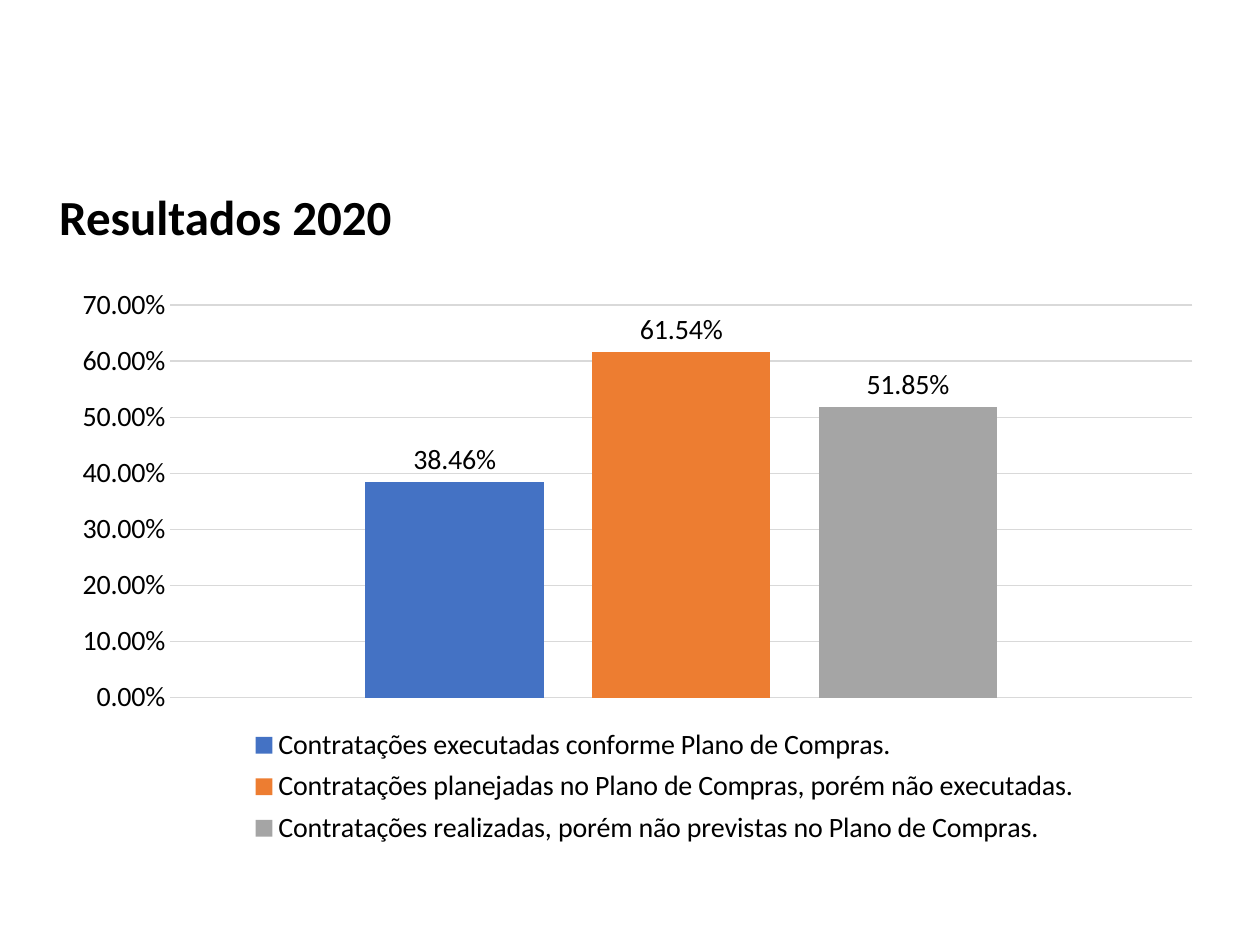
"""Build the 2020 results slide: a title above a clustered column chart."""
from lxml import etree
from pptx import Presentation
from pptx import util as u
from pptx.chart.data import CategoryChartData
from pptx.dml.color import RGBColor
from pptx.enum import chart as ch, text
from pptx.oxml.ns import qn

TITLE = "Resultados 2020"
CATEGORIES = ["1"]
SERIES = [
    ("Contratações executadas conforme Plano de Compras.", 0.3846, "blue"),
    ("Contratações planejadas no Plano de Compras, porém não executadas.", 0.6154, "orange"),
    ("Contratações realizadas, porém não previstas no Plano de Compras.", 0.5185, "gray"),
]
COLORS = {"text": "000000", "grid": "D9D9D9", "blue": "4472C4",
          "orange": "ED7D31", "gray": "A5A5A5"}
PERCENT = "0.00%"
TITLE_BOX = (26.64, 106.56, 666, 398.88)
CHART_BOX = (28.08, 140.4, 664.56, 353.52)
PLOT_BOX = (69.1, 33.9, 584.2, 224.5)
LEGEND_BOX = (112.5, 271.5, 478.5, 75.5)
TITLE_FONT = {"name": "Calibri", "size": u.Pt(28), "bold": True}
CHART_FONT = {"name": "Calibri", "size": u.Pt(16), "bold": False}


def rgb(key):
    """Return the named colour."""
    return RGBColor.from_string(COLORS[key])


def apply(obj, values):
    """Set attributes from a dict."""
    for name, value in values.items():
        setattr(obj, name, value)


def style_font(font, values):
    """Format a font in the text colour."""
    apply(font, values)
    font.color.rgb = rgb("text")


def points(box):
    """Convert a box to point lengths."""
    return [u.Pt(n) for n in box]


def add_title(s):
    """Place and format the title."""
    sp = s.shapes.title
    apply(sp, dict(zip(("left", "top", "width", "height"), points(TITLE_BOX))))
    tf = sp.text_frame
    apply(tf, {"text": TITLE, "word_wrap": True, "auto_size": text.MSO_AUTO_SIZE.NONE,
               "vertical_anchor": text.MSO_ANCHOR.TOP})
    p = tf.paragraphs[0]
    apply(p, {"alignment": text.PP_ALIGN.LEFT, "line_spacing": 0.9, "space_before": u.Pt(0)})
    style_font(p.runs[0].font, TITLE_FONT)


def set_layout(parent, index, box, target=None):
    """Fix a chart part at a box measured in points inside the chart."""
    for old in parent.findall(qn("c:layout")):
        parent.remove(old)
    layout = etree.Element(qn("c:layout"))
    manual = etree.SubElement(layout, qn("c:manualLayout"))
    values = {"layoutTarget": target} if target else {}
    values.update(xMode="edge", yMode="edge")
    values.update(zip("xywh", (n / size for n, size in zip(box, CHART_BOX[2:] * 2))))
    for name, value in values.items():
        etree.SubElement(manual, qn(f"c:{name}")).set("val", str(value))
    parent.insert(index, layout)


def add_chart(s):
    """Add the column chart."""
    data = CategoryChartData(number_format=PERCENT)
    data.categories = CATEGORIES
    for name, value, _ in SERIES:
        data.add_series(name, [value])
    chart = s.shapes.add_chart(ch.XL_CHART_TYPE.COLUMN_CLUSTERED, *points(CHART_BOX), data).chart
    apply(chart, {"has_title": False, "has_legend": True})
    style_font(chart.font, CHART_FONT)
    apply(chart.legend, {"position": ch.XL_LEGEND_POSITION.BOTTOM, "include_in_layout": False})
    style_font(chart.legend.font, CHART_FONT)

    chart.category_axis.visible = False
    axis = chart.value_axis
    apply(axis, {"minimum_scale": 0, "maximum_scale": 0.7, "major_unit": 0.1,
                 "major_tick_mark": ch.XL_TICK_MARK.NONE,
                 "minor_tick_mark": ch.XL_TICK_MARK.NONE, "has_major_gridlines": True})
    axis.format.line.fill.background()
    grid = axis.major_gridlines.format.line
    grid.width = u.Pt(0.75)
    grid.color.rgb = rgb("grid")
    number = {"number_format": PERCENT, "number_format_is_linked": False}
    apply(axis.tick_labels, number)
    style_font(axis.tick_labels.font, CHART_FONT)

    plot = chart.plots[0]
    apply(plot, {"gap_width": 219, "overlap": -27, "vary_by_categories": False})
    for series, (_, _, color) in zip(plot.series, SERIES):
        series.format.fill.solid()
        series.format.fill.fore_color.rgb = rgb(color)
        labels = series.data_labels
        apply(labels, {"show_value": True, "position": ch.XL_LABEL_POSITION.OUTSIDE_END, **number})
        style_font(labels.font, CHART_FONT)
    root = chart._chartSpace.chart
    set_layout(root.plotArea, 0, PLOT_BOX, "inner")
    set_layout(root.find(qn("c:legend")), 1, LEGEND_BOX)


def main():
    """Create and save the presentation."""
    prs = Presentation()
    apply(prs, {"slide_width": u.Pt(720), "slide_height": u.Pt(540)})
    s = prs.slides.add_slide(prs.slide_layouts[5])
    add_title(s)
    add_chart(s)
    prs.save("out.pptx")


if __name__ == "__main__":
    main()
